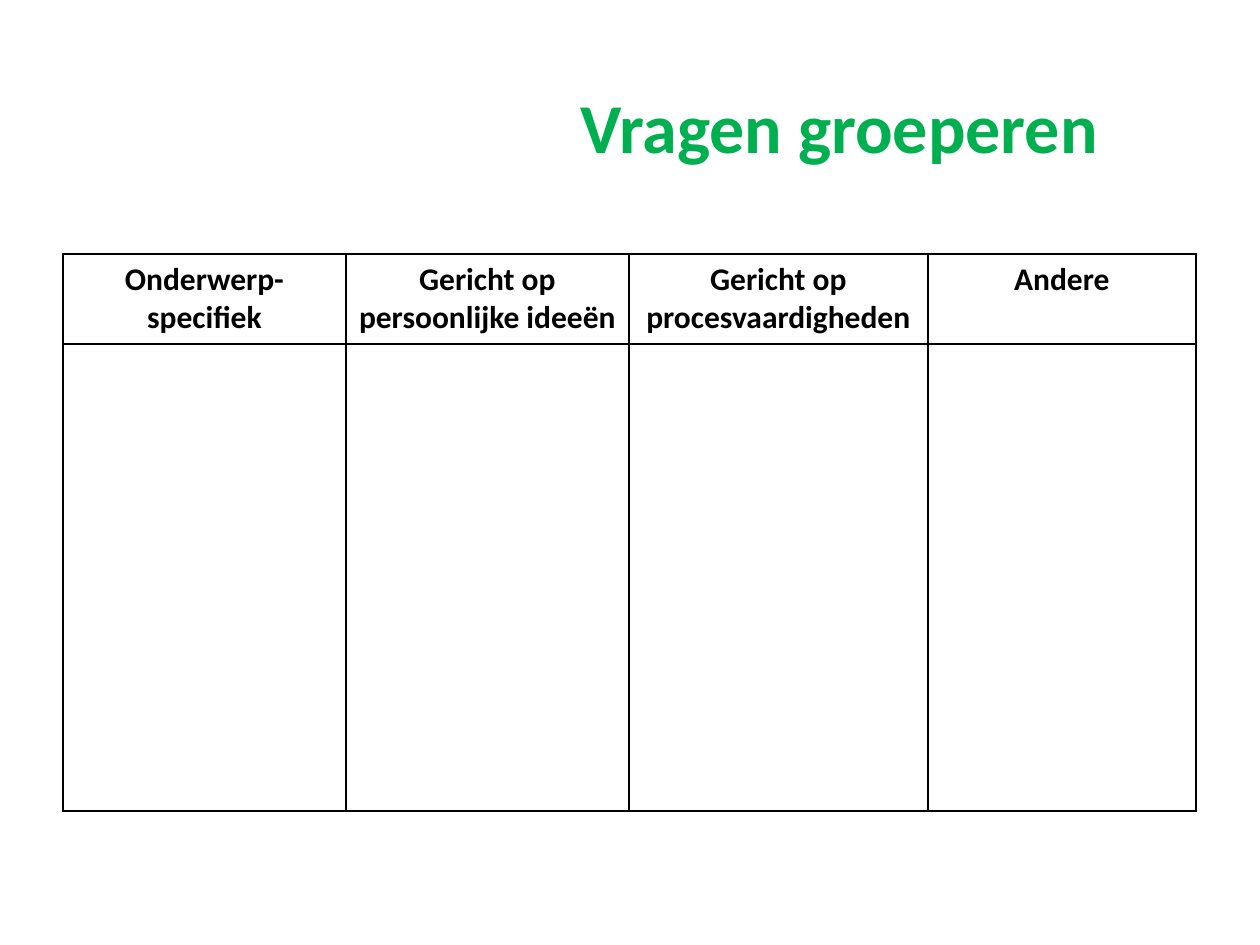
from lxml import etree
from pptx import Presentation
from pptx import util as u
from pptx.dml.color import RGBColor
from pptx.enum import text
from pptx.oxml.ns import qn

COLORS = {"title": "00B050", "ink": "000000"}
PX_PER_INCH = 126


def px(length):
    return u.Emu(round(length * u.Inches(1) / PX_PER_INCH))


def style(paragraph, size, color):
    paragraph.alignment = text.PP_ALIGN.CENTER
    paragraph.font.name = "Calibri"
    paragraph.font.size = u.Pt(size)
    paragraph.font.bold = True
    paragraph.font.color.rgb = RGBColor.from_string(COLORS[color])


deck = Presentation()
deck.slide_width, deck.slide_height = px(1260), px(945)
slide = deck.slides.add_slide(deck.slide_layouts[6])

title = slide.shapes.add_textbox(px(481), px(38), px(716), px(176)).text_frame
title.word_wrap = True
title.vertical_anchor = text.MSO_ANCHOR.MIDDLE
title.text = "Vragen groeperen"
style(title.paragraphs[0], 40, "title")

categories = [
    ("Onderwerp- specifiek", 283),
    ("Gericht op persoonlijke ideeën", 283),
    ("Gericht op procesvaardigheden", 299),
    ("Andere", 268),
]
row_heights = [90, 467]
table_width = sum(width for _, width in categories)
questions = slide.shapes.add_table(
    len(row_heights), len(categories),
    px(63), px(254), px(table_width), px(sum(row_heights)),
).table
questions.first_row = questions.horz_banding = False

for row, height in zip(questions.rows, row_heights):
    row.height = px(height)
for column, (category, width) in enumerate(categories):
    questions.columns[column].width = px(width)
    heading = questions.cell(0, column)
    heading.text = category
    style(heading.text_frame.paragraphs[0], 18, "ink")

for cell in questions.iter_cells():
    properties = cell._tc.get_or_add_tcPr()
    for side in ("a:lnL", "a:lnR", "a:lnT", "a:lnB"):
        border = etree.SubElement(properties, qn(side), w=str(u.Pt(1)))
        fill = etree.SubElement(border, qn("a:solidFill"))
        etree.SubElement(fill, qn("a:srgbClr"), val=COLORS["ink"])
    cell.fill.background()

deck.save("out.pptx")
